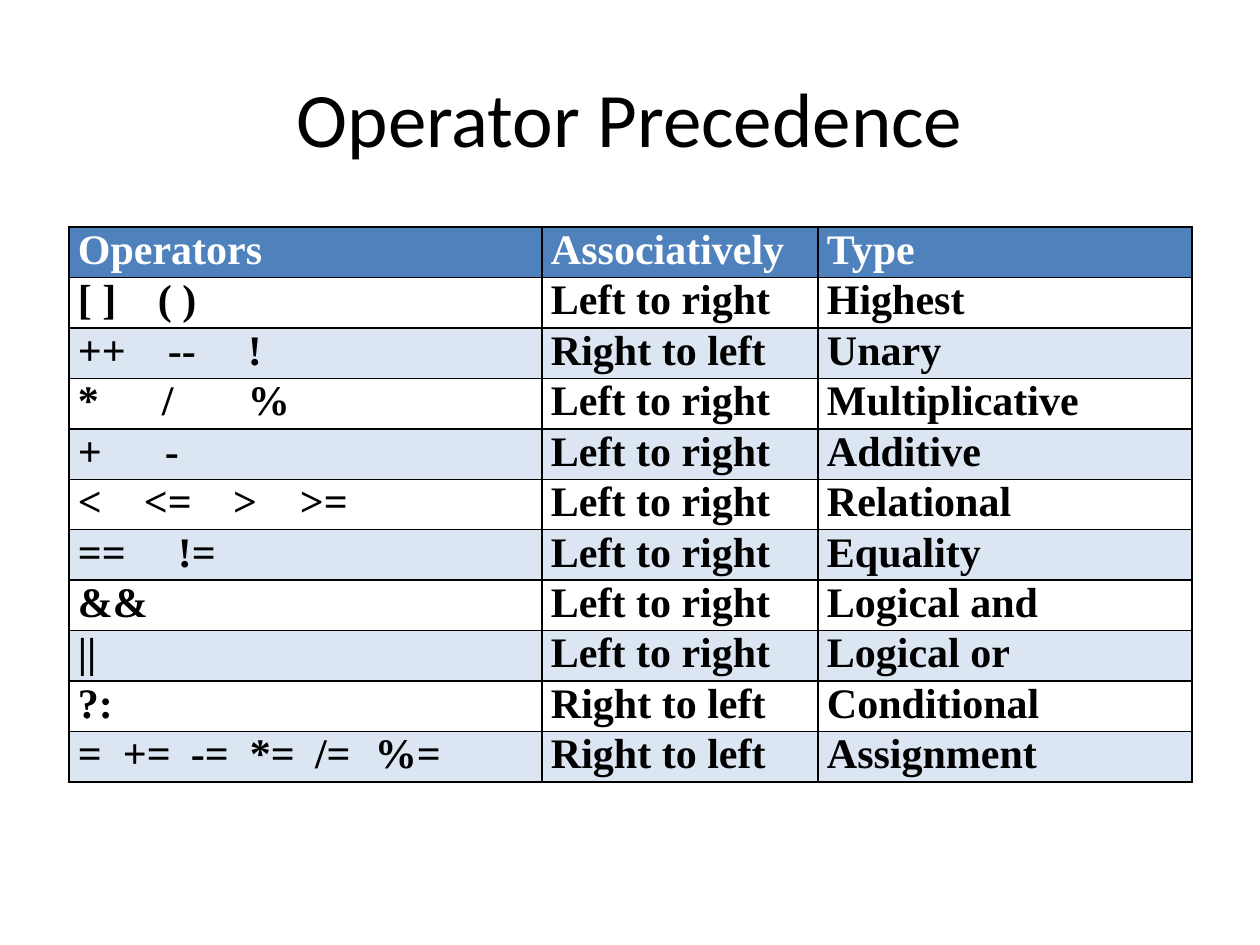
from pptx import Presentation, util as u
from pptx.dml.color import RGBColor
from pptx.enum import text
from pptx.oxml import parse_xml
from pptx.oxml.ns import nsdecls

BLACK = RGBColor(0x00, 0x00, 0x00)
WHITE = RGBColor(0xFF, 0xFF, 0xFF)
HEADER_BLUE = RGBColor(0x4F, 0x81, 0xBD)
BAND_BLUE = RGBColor(0xDC, 0xE6, 0xF2)

COLUMN_WIDTHS = (473, 276, 374)
HEADINGS = ("Operators", "Associatively", "Type")
LEFT, RIGHT = "Left to right", "Right to left"
PRECEDENCE = (
    (("[ ]", "( )"), (80,), LEFT, "Highest"),
    (("++", "--", "!"), (90, 170), RIGHT, "Unary"),
    (("*", "/", "%"), (84, 170), LEFT, "Multiplicative"),
    (("+", "-"), (87,), LEFT, "Additive"),
    (("<", "<=", ">", ">="), (66, 155, 222), LEFT, "Relational"),
    (("==", "!="), (100,), LEFT, "Equality"),
    (("&&",), (), LEFT, "Logical and"),
    (("||",), (), LEFT, "Logical or"),
    (("?:",), (), RIGHT, "Conditional"),
    (("=", "+=", "-=", "*=", "/=", "%="), (45, 113, 172, 237, 297), RIGHT, "Assignment"),
)


def px(length):
    return u.Emu(round(length * 914400 / 126))


class SlideBuilder:
    """Holds the text styles and the current slide, and adds elements to it."""

    title_style = {"name": "Calibri", "size": u.Pt(44)}
    cell_style = {"name": "Times New Roman", "size": u.Pt(24), "bold": True}

    def __init__(self, deck):
        self.page = deck.slides.add_slide(deck.slide_layouts[6])

    def add_span(self, para, words, style, color):
        span = para.add_run()
        span.text = words
        for name, value in style.items():
            setattr(span.font, name, value)
        span.font.color.rgb = color

    def title(self, words, *bounds):
        frame = self.page.shapes.add_textbox(*map(px, bounds)).text_frame
        frame.word_wrap = True
        frame.vertical_anchor = text.MSO_ANCHOR.MIDDLE
        para = frame.paragraphs[0]
        para.alignment = text.PP_ALIGN.CENTER
        self.add_span(para, words, self.title_style, BLACK)

    def table(self, rows, widths, left, top, height):
        frame = self.page.shapes.add_table(
            len(rows), len(widths), px(left), px(top), px(sum(widths)), px(height))
        grid = frame.table
        for column, width in zip(grid.columns, widths):
            column.width = px(width)
        for r, row in enumerate(rows):
            color = BLACK if r else WHITE
            fill = HEADER_BLUE if r == 0 else BAND_BLUE if r % 2 == 0 else None
            for c, (words, stops) in enumerate(row):
                self.cell(grid.cell(r, c), words, stops, color, fill)

    def cell(self, cell, words, stops, color, fill):
        margins = {"margin_left": px(9), "margin_right": px(9),
                   "margin_top": 0, "margin_bottom": 0}
        for name, value in margins.items():
            setattr(cell, name, value)
        if fill is None:
            cell.fill.background()
        else:
            cell.fill.solid()
            cell.fill.fore_color.rgb = fill
        self.borders(cell)
        para = cell.text_frame.paragraphs[0]
        self.add_span(para, words, self.cell_style, color)
        if stops:
            self.tab_stops(para, stops)

    def borders(self, cell):
        properties = cell._tc.get_or_add_tcPr()
        for index, side in enumerate("LRTB"):
            properties.insert(index, parse_xml(
                f'<a:ln{side} {nsdecls("a")} w="{u.Pt(1)}"><a:solidFill>'
                f'<a:srgbClr val="{BLACK}"/></a:solidFill></a:ln{side}>'))

    def tab_stops(self, para, stops):
        tabs = "".join(f'<a:tab pos="{px(stop)}" algn="l"/>' for stop in stops)
        para._p.get_or_add_pPr().append(
            parse_xml(f'<a:tabLst {nsdecls("a")}>{tabs}</a:tabLst>'))


def main():
    deck = Presentation()
    deck.slide_width, deck.slide_height = px(1260), px(945)
    builder = SlideBuilder(deck)
    builder.title("Operator Precedence", 63, 38, 1134, 158)
    rows = [[(heading, ()) for heading in HEADINGS]]
    for operators, stops, direction, kind in PRECEDENCE:
        rows.append([("\t".join(operators), stops), (direction, ()), (kind, ())])
    builder.table(rows, COLUMN_WIDTHS, 69, 227, 554)
    deck.save("out.pptx")


if __name__ == "__main__":
    main()
